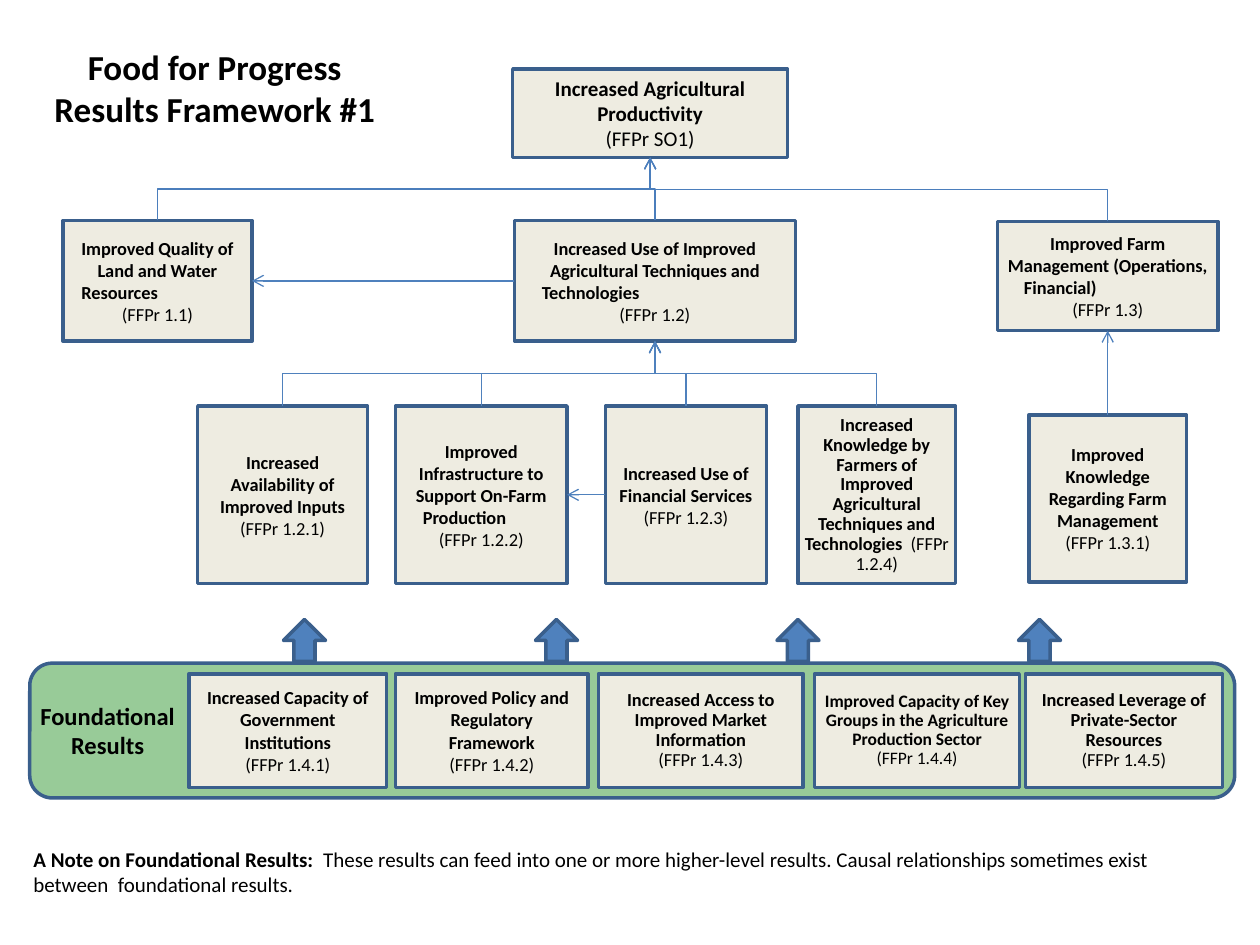
from lxml import etree
from pptx import Presentation
from pptx.dml.color import RGBColor
from pptx.enum.shapes import MSO_CONNECTOR, MSO_SHAPE
from pptx.enum.text import MSO_ANCHOR, PP_ALIGN
from pptx.oxml.ns import qn
from pptx.util import Pt

RECT, ROUNDED, UP = MSO_SHAPE.RECTANGLE, MSO_SHAPE.ROUNDED_RECTANGLE, MSO_SHAPE.UP_ARROW
STRAIGHT, ELBOW = MSO_CONNECTOR.STRAIGHT, MSO_CONNECTOR.ELBOW
LEFT, CENTER = PP_ALIGN.LEFT, PP_ALIGN.CENTER
TOP, MIDDLE = MSO_ANCHOR.TOP, MSO_ANCHOR.MIDDLE
SIDE_TOP, SIDE_LEFT, SIDE_BOTTOM, SIDE_RIGHT = range(4)
FONT = "Calibri"
COLORS = {
    "text": "000000", "box": "EEECE1", "border": "3A5F8C", "arrow": "4F81BD",
    "upper_arrow": "4B7EBC", "band": "339933",
}

deck = Presentation()
deck.slide_width, deck.slide_height = Pt(720), Pt(540)
page = deck.slides.add_slide(deck.slide_layouts[6])


def add_block(kind, place, fill):
    block = page.shapes.add_shape(kind, *map(Pt, place))
    block.shadow.inherit = False
    block.fill.solid()
    block.fill.fore_color.rgb = RGBColor.from_string(COLORS[fill])
    block.line.color.rgb = RGBColor.from_string(COLORS["border"])
    block.line.width = Pt(2)
    return block


def write(frame, paragraphs, size, anchor=MIDDLE, align=CENTER):
    """Fill a frame; each paragraph is a list of (text, bold) spans."""
    frame.word_wrap = True
    frame.vertical_anchor = anchor
    for index, spans in enumerate(paragraphs):
        para = frame.paragraphs[0] if index == 0 else frame.add_paragraph()
        para.alignment = align
        for text, bold in spans:
            span = para.add_run()
            span.text = text
            span.font.name, span.font.size, span.font.bold = FONT, Pt(size), bold
            span.font.color.rgb = RGBColor.from_string(COLORS["text"])


# Band behind the foundational results
band = add_block(ROUNDED, (17, 379, 688.5, 77), "band")
band_color = band.fill._xPr.find(qn("a:solidFill"))[0]
etree.SubElement(band_color, qn("a:alpha"), val="50000")

# Result boxes: code, title, place, side inset, text size, line spacing
results = [
    ("SO1", "Increased Agricultural Productivity", (293, 39.5, 157, 50.5), 7.2, 12, 1),
    ("1.1", "Improved Quality of Land and Water", (36, 126, 108, 69), 7.2, 10.5, 1),
    ("1.2", "Increased Use of Improved Agricultural Techniques and",
     (294, 126, 160.5, 69), 7.2, 10.5, 1),
    ("1.3", "Improved Farm Management (Operations,", (570, 126.5, 126, 62.5), 3.6, 10.5, 1),
    ("1.2.1", "Increased Availability of Improved Inputs", (113, 232, 97, 101.5), 7.2, 10.5, 1),
    ("1.2.2", "Improved Infrastructure to Support On-Farm",
     (226, 232, 98, 101.5), 3.6, 10.5, 1),
    ("1.2.3", "Increased Use of Financial Services", (346, 232, 92, 101.5), 3.6, 10.5, 1),
    ("1.2.4", "Increased Knowledge by Farmers of Improved Agricultural Techniques "
     "and Technologies  ", (456, 232, 90, 101.5), 3.6, 10.5, 0.9),
    ("1.3.1", "Improved Knowledge Regarding Farm Management",
     (588, 237, 90, 95.5), 7.2, 10.5, 1),
    ("1.4.1", "Increased Capacity of Government Institutions", (108, 385, 113, 65), 7.2, 10.5, 1),
    ("1.4.2", "Improved Policy and Regulatory Framework", (226, 385, 110, 65), 7.2, 10.5, 1),
    ("1.4.3", "Increased Access to Improved Market Information",
     (342, 385, 117, 65), 7.2, 10.5, 0.9),
    ("1.4.4", "Improved Capacity of Key Groups in the Agriculture Production Sector",
     (465.5, 385, 117, 65), 0, 10, 0.9),
    ("1.4.5", "Increased Leverage of Private-Sector Resources",
     (586, 385, 112.5, 65), 7.2, 10.5, 0.9),
]
# Last title words that stand on an indented line of their own
last_words = {
    "1.1": ("Resources", 3.5), "1.2": ("Technologies", 8.5),
    "1.3": ("Financial)", 11.5), "1.2.2": ("Production", 12),
}
boxes = {}
for code, title, place, inset, size, spacing in results:
    box = boxes[code] = add_block(RECT, place, "box")
    frame = box.text_frame
    frame.margin_left = frame.margin_right = Pt(inset)
    frame.margin_top = frame.margin_bottom = Pt(3.6)
    label = (f"(FFPr {code})", False)
    if code == "1.2.4":
        paragraphs = [[(title, True), label]]
    elif code in last_words:
        paragraphs = [[(title, True)], [(last_words[code][0], True)], [label]]
    else:
        paragraphs = [[(title, True)], [label]]
    write(frame, paragraphs, size)
    for para in frame.paragraphs:
        para.line_spacing = spacing
    if code in last_words:
        para = frame.paragraphs[1]
        para.alignment = LEFT
        para._p.get_or_add_pPr().set("marL", str(Pt(last_words[code][1])))

# Arrows between results: from, to, sides for straight ones, colour
links = [(child, "1.2", None, "arrow") for child in ("1.2.4", "1.2.3", "1.2.2", "1.2.1")]
links += [
    ("1.3.1", "1.3", (SIDE_TOP, SIDE_BOTTOM), "arrow"),
    ("1.2.3", "1.2.2", (SIDE_LEFT, SIDE_RIGHT), "arrow"),
    ("1.2", "1.1", (SIDE_LEFT, SIDE_RIGHT), "arrow"),
]
links += [(child, "SO1", None, "upper_arrow") for child in ("1.1", "1.2", "1.3")]
for source, target, sides, color in links:
    start, end = boxes[source], boxes[target]
    link = page.shapes.add_connector(STRAIGHT if sides else ELBOW, 0, 0, 0, 0)
    if sides:
        link.begin_connect(start, sides[0])
        link.end_connect(end, sides[1])
    else:
        # A vertical elbow is a horizontal one turned about its centre
        x1, y1 = start.left + start.width // 2, start.top
        x2, y2 = end.left + end.width // 2, end.top + end.height
        link.width, link.height = y1 - y2, abs(x1 - x2)
        link.left = (x1 + x2 - link.width) // 2
        link.top = (y1 + y2 - link.height) // 2
        frame = link._element.spPr.find(qn("a:xfrm"))
        frame.set("rot", str((270 if x1 > x2 else 90) * 60000))
        frame.set("flipH", "0" if x1 > x2 else "1")
        frame.set("flipV", "1")
    link.line.color.rgb = RGBColor.from_string(COLORS[color])
    link.line.width = Pt(0.75)
    etree.SubElement(link.line._get_or_add_ln(), qn("a:tailEnd"), type="arrow")
    etree.SubElement(link._element.spPr, qn("a:effectLst"))

# Block arrows rising from the band
for left in (162, 306, 444, 582):
    add_block(UP, (left, 354, 24, 24), "arrow")

# Title, band label and note
texts = [
    ((23, 22.5, 199.5, 55.5), 20, CENTER,
     [[("Food for Progress", True)], [("Results Framework #1", True)]]),
    ((15, 397, 93, 41), 14, CENTER, [[("Foundational", True)], [("Results", True)]]),
    ((12, 480, 696, 36), 12, LEFT,
     [[("A Note on Foundational Results:  ", True),
       ("These results can feed into one or more higher-level results. Causal "
        "relationships sometimes exist between  foundational results.", False)]]),
]
for place, size, align, paragraphs in texts:
    box = page.shapes.add_textbox(*map(Pt, place))
    write(box.text_frame, paragraphs, size, TOP, align)

deck.save("out.pptx")
